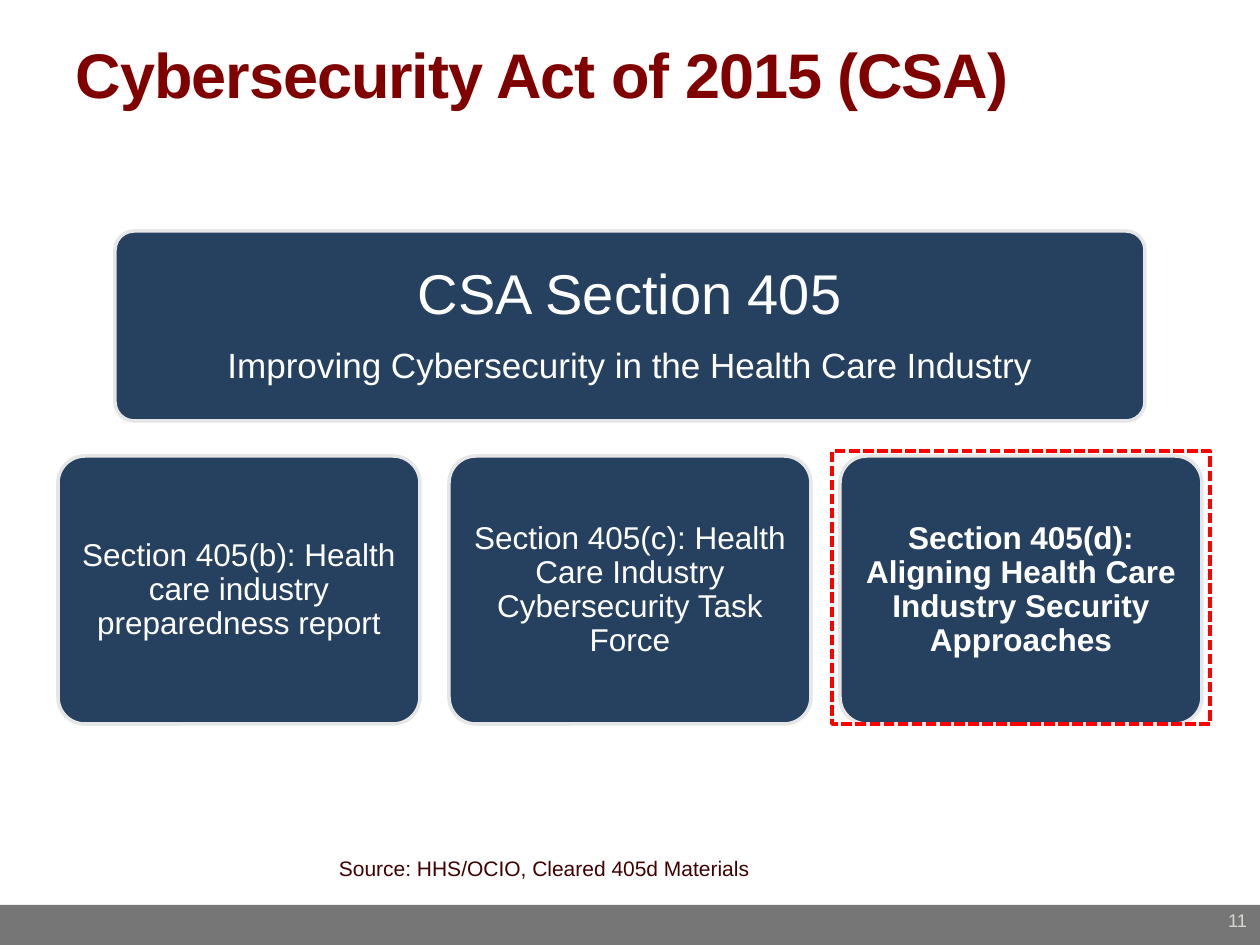
import pptx
import pptx.util
import pptx.dml.color
import pptx.enum.dml
import pptx.enum.shapes
import pptx.enum.text

RGBColor = pptx.dml.color.RGBColor
Shapes = pptx.enum.shapes.MSO_SHAPE
Align = pptx.enum.text.PP_ALIGN
Anchor = pptx.enum.text.MSO_ANCHOR

MAROON = RGBColor(0x80, 0x00, 0x00)
DARK_MAROON = RGBColor(0x40, 0x00, 0x00)
NAVY = RGBColor(0x26, 0x41, 0x60)
PALE_GRAY = RGBColor(0xE7, 0xE6, 0xE6)
FOOTER_GRAY = RGBColor(0x76, 0x76, 0x76)
NUMBER_GRAY = RGBColor(0xD6, 0xD6, 0xD0)
RED = RGBColor(0xFF, 0x00, 0x00)
WHITE = RGBColor(0xFF, 0xFF, 0xFF)

FONT = "Arial"
PX_PER_INCH = 126


def px(length):
    return pptx.util.Emu(round(length * 914400 / PX_PER_INCH))


def add_box(slide, box, preset, fill=None, line=None, dash=None):
    shape = slide.shapes.add_shape(preset, *map(px, box))
    shape.shadow.inherit = False
    if fill is None:
        shape.fill.background()
    else:
        shape.fill.solid()
        shape.fill.fore_color.rgb = fill
    if line is None:
        shape.line.fill.background()
    else:
        shape.line.color.rgb = line
        shape.line.width = pptx.util.Pt(2)
        shape.line.dash_style = dash
    return shape


def set_frame(shape, insets, anchor=Anchor.TOP):
    frame = shape.text_frame
    frame.word_wrap = True
    frame.vertical_anchor = anchor
    (frame.margin_left, frame.margin_top,
     frame.margin_right, frame.margin_bottom) = map(px, insets)
    return frame


def add_text_box(slide, box, insets=(13, 6, 13, 6)):
    return set_frame(slide.shapes.add_textbox(*map(px, box)), insets)


def write(paragraph, text, size, color, bold=False, align=Align.LEFT,
          line_spacing=1.0, space_after=0, tracking=None):
    paragraph.alignment = align
    paragraph.line_spacing = line_spacing
    paragraph.space_after = pptx.util.Pt(space_after)
    run = paragraph.add_run()
    run.text = text
    run.font.name = FONT
    run.font.size = pptx.util.Pt(size)
    run.font.bold = bold
    run.font.color.rgb = color
    if tracking is not None:
        run.font._element.set("spc", str(tracking))


def add_card(slide, box, inset, lines, bold=False):
    """Rounded card with centred lines, each a (text, size) pair."""
    card = add_box(slide, box, Shapes.ROUNDED_RECTANGLE, NAVY, PALE_GRAY)
    card.adjustments[0] = 0.1
    frame = set_frame(card, (inset,) * 4, Anchor.MIDDLE)
    for index, (text, size) in enumerate(lines):
        paragraph = frame.add_paragraph() if index else frame.paragraphs[0]
        is_last = index == len(lines) - 1
        write(paragraph, text, size, WHITE, bold=bold, align=Align.CENTER,
              line_spacing=0.9, space_after=0 if is_last else 12)


def add_title(slide, box):
    frame = add_text_box(slide, box)
    write(frame.paragraphs[0], "Cybersecurity Act of 2015 (CSA)", 36, MAROON,
          bold=True, line_spacing=0.9, tracking=-60)


def add_section_row(slide, box, gap):
    sections = (
        "Section 405(b): Health care industry preparedness report",
        "Section 405(c): Health Care Industry Cybersecurity Task Force",
        "Section 405(d): Aligning Health Care Industry Security Approaches",
    )
    left, top, width, height = box
    card_width = (width - gap * (len(sections) - 1)) // len(sections)
    for index, text in enumerate(sections):
        card_left = left + index * (card_width + gap)
        is_last = index == len(sections) - 1
        add_card(slide, (card_left, top, card_width, height), 9,
                 [(text, 18)], bold=is_last)
    # Dashed frame around the last section
    add_box(slide, (card_left - 8, top - 5, card_width + 16, height + 5),
            Shapes.RECTANGLE, line=RED,
            dash=pptx.enum.dml.MSO_LINE.SQUARE_DOT)


def add_source(slide, box):
    frame = add_text_box(slide, box)
    write(frame.paragraphs[0], "Source: HHS/OCIO, Cleared 405d Materials",
          12, DARK_MAROON)


def add_footer(slide, box):
    left, top, width, height = box
    add_box(slide, box, Shapes.RECTANGLE, FOOTER_GRAY)
    frame = add_text_box(slide, (left + width - 125, top - 2, 125, height + 2),
                         (0, 6, 13, 6))
    write(frame.paragraphs[0], "11", 10.5, NUMBER_GRAY, align=Align.RIGHT)


def main():
    presentation = pptx.Presentation()
    presentation.slide_width = px(1260)
    presentation.slide_height = px(945)
    slide = presentation.slides.add_slide(presentation.slide_layouts[6])

    add_footer(slide, (0, 905, 1260, 40))
    add_title(slide, (63, 38, 1134, 157))
    # Act section and its three subsections
    add_card(slide, (115, 231, 1030, 190), 16, [
        ("CSA Section 405", 32),
        ("Improving Cybersecurity in the Health Care Industry", 20),
    ])
    add_section_row(slide, (58, 456, 1144, 268), 29)
    add_source(slide, (326, 850, 867, 38))

    presentation.save("out.pptx")


if __name__ == "__main__":
    main()
